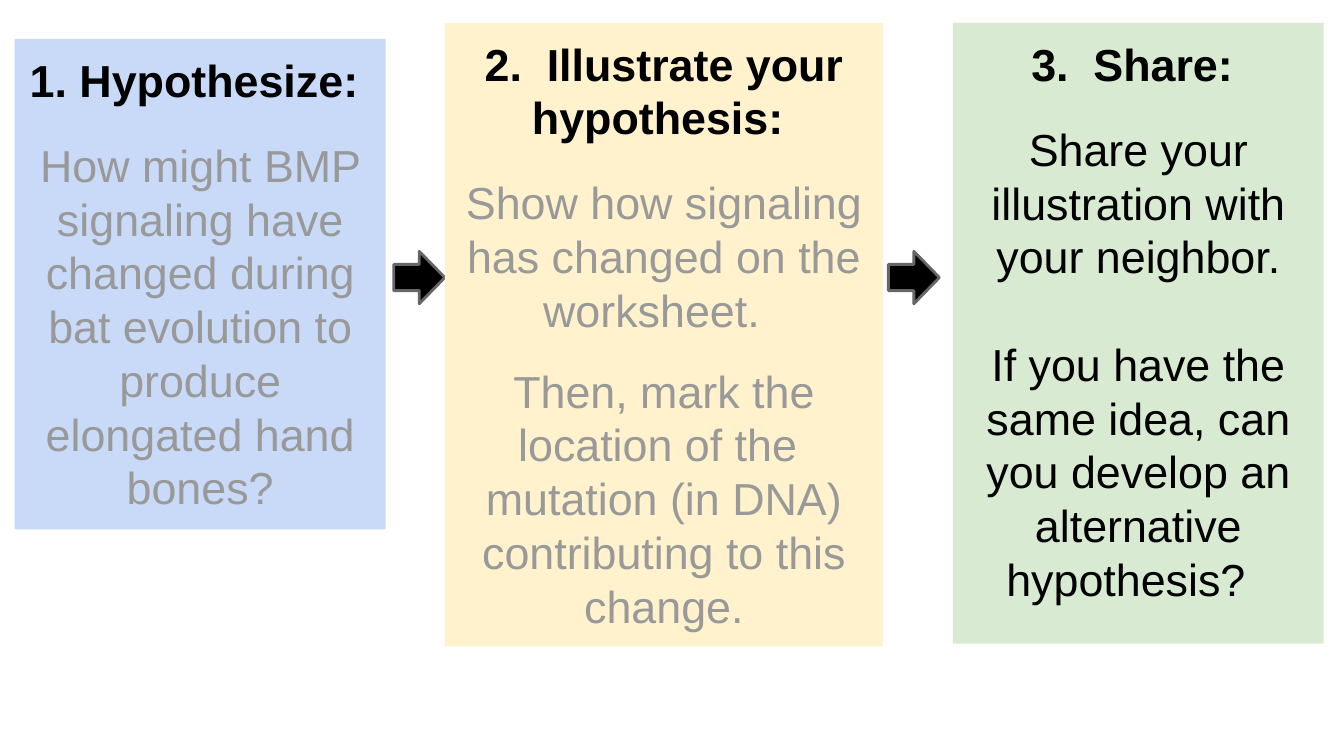
from dataclasses import dataclass

from pptx import Presentation
from pptx import util as u
from pptx.dml.color import RGBColor
from pptx.enum import shapes, text

SLIDE_WIDTH = 10
FONT = "Arial"
SIZE = 24
LEADING = 1.2  # line height as a multiple of the text size
COLORS = {
    "blue": "C9DAF8", "yellow": "FFF2CC", "green": "D9EAD3",
    "black": "000000", "gray": "999999", "outline": "666666",
}


@dataclass
class Para:
    words: str
    gap: int  # text size, in points, of the line's worth of space above


@dataclass
class Step:
    left: float
    top: float
    width: float
    height: float
    fill: str
    body_color: str
    heading: str
    body: list[Para]


STEPS = [
    Step(0.11, 0.29, 2.76, 3.65, "blue", "gray", "1. Hypothesize: ", [
        Para("How might BMP signaling have changed during bat evolution "
             "to produce elongated hand bones?", 14),
    ]),
    Step(7.09, 0.17, 2.76, 4.62, "green", "black", "3.  Share: ", [
        Para("Share your illustration with your neighbor.", 14),
        Para("If you have the same idea, can you develop an alternative "
             "hypothesis?  ", 24),
    ]),
    Step(3.31, 0.17, 3.26, 4.64, "yellow", "gray",
         "2.  Illustrate your hypothesis: ", [
             Para("Show how signaling has changed on the worksheet.  ", 14),
             Para("Then, mark the location of the  mutation (in DNA) "
                  "contributing to this change.", 12),
         ]),
]
ARROW_LEFTS = [2.93, 6.61]


def rgb(name: str) -> RGBColor:
    return RGBColor.from_string(COLORS[name])


def add_filled(slide, kind, left: float, top: float, width: float,
               height: float, fill: str):
    sp = slide.shapes.add_shape(kind, *map(u.Inches, (left, top, width, height)))
    sp.shadow.inherit = False
    sp.fill.solid()
    sp.fill.fore_color.rgb = rgb(fill)
    return sp


def add_arrow(slide, left: float) -> None:
    sp = add_filled(slide, shapes.MSO_SHAPE.RIGHT_ARROW,
                    left, 1.87, 0.38, 0.39, "black")
    sp.line.color.rgb = rgb("outline")
    sp.line.width = u.Pt(1.5)


def write(p, words: str, color: str, bold: bool, gap: int) -> None:
    p.alignment = text.PP_ALIGN.CENTER
    p.line_spacing = u.Pt(SIZE * LEADING)
    p.space_before = u.Pt(gap * LEADING)
    r = p.add_run()
    r.text = words
    r.font.name = FONT
    r.font.size = u.Pt(SIZE)
    r.font.bold = bold
    r.font.color.rgb = rgb(color)


def add_step(slide, step: Step) -> None:
    sp = add_filled(slide, shapes.MSO_SHAPE.RECTANGLE, step.left, step.top,
                    step.width, step.height, step.fill)
    sp.line.fill.background()
    tf = sp.text_frame
    tf.word_wrap = True
    tf.vertical_anchor = text.MSO_ANCHOR.TOP
    tf.margin_left = tf.margin_right = u.Inches(0.1)
    tf.margin_top = tf.margin_bottom = u.Inches(0.1)
    write(tf.paragraphs[0], step.heading, "black", True, 0)
    for para in step.body:
        write(tf.add_paragraph(), para.words, step.body_color, False, para.gap)


def main() -> None:
    prs = Presentation()
    prs.slide_width = u.Inches(SLIDE_WIDTH)
    prs.slide_height = u.Inches(SLIDE_WIDTH * 9 / 16)
    slide = prs.slides.add_slide(prs.slide_layouts[6])

    # Arrows between the steps
    for left in ARROW_LEFTS:
        add_arrow(slide, left)

    # Step panels, the middle one on top
    for step in STEPS:
        add_step(slide, step)

    prs.save("out.pptx")


if __name__ == "__main__":
    main()
